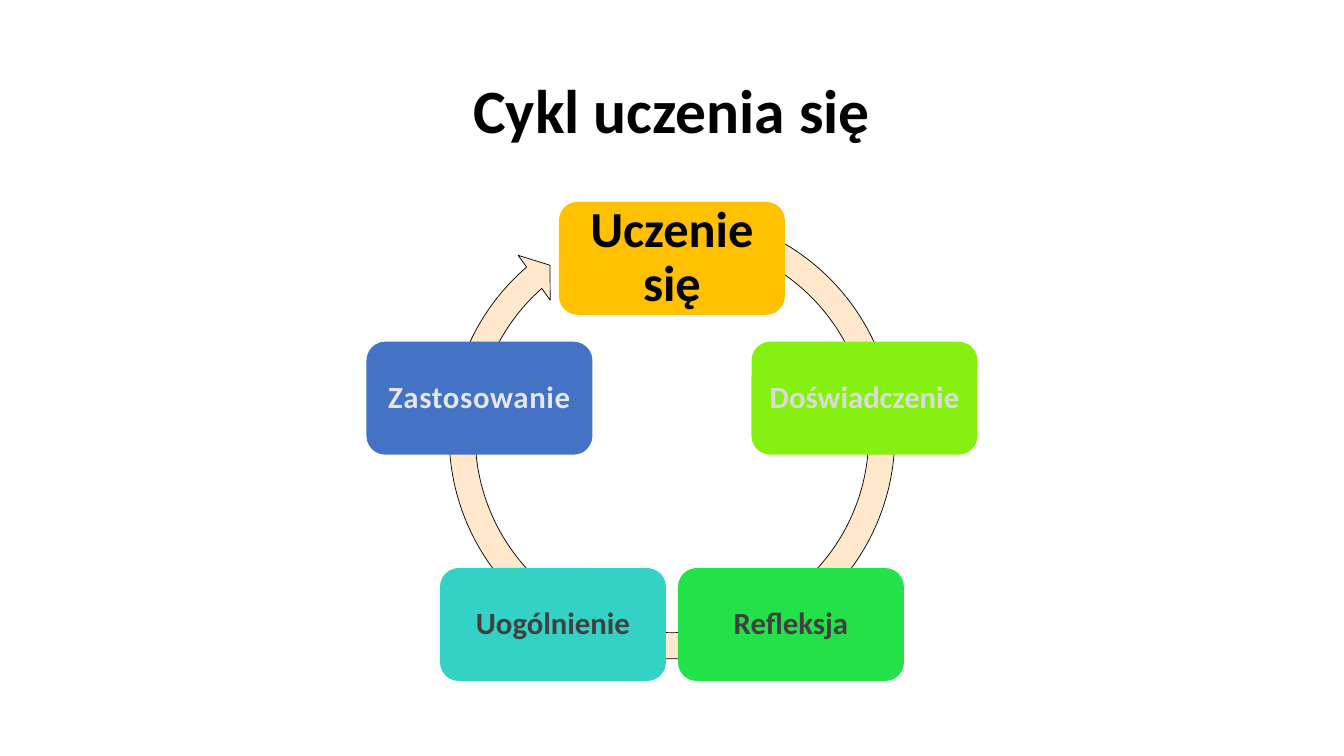
from math import cos, radians, sin

from pptx import Presentation
from pptx.dml.color import RGBColor
from pptx.enum.shapes import MSO_SHAPE as Shape
from pptx.enum.text import MSO_ANCHOR as Anchor, PP_ALIGN as Align
from pptx.util import Inches, Pt

# Square grid: 160 columns by 90 rows
COLUMNS, ROWS = 160, 90
CELL = Inches(1 / 12)

COLOURS = {
    "black": "000000", "ring": "FFE8CC",
    "amber": "FFC000", "lime": "86F011", "green": "23E148",
    "teal": "33D2C5", "blue": "4472C4",
    "silver": "DBDBDB", "graphite": "404040", "pearl": "E7E6E6",
}

# Cycle geometry in grid cells
CENTRE_COLUMN, CENTRE_ROW, RADIUS = 80, 54.85, 24.1
CARD_WIDTH, CARD_HEIGHT = 26.9, 13.45
RING_SIZE, RING_ROW = 56.5, 51.9
RING_BENDS = (0.055, 3.307, 137.364, 174.101, 0.058)

# Clockwise from the top: label, fill, ink, size, inset in inches, letter spacing
STAGES = [
    ("Uczenie się", "amber", "black", 36, 0.15, 0),
    ("Doświadczenie", "lime", "silver", 22, 0.09, 0),
    ("Refleksja", "green", "graphite", 22, 0.09, 0),
    ("Uogólnienie", "teal", "graphite", 22, 0.09, 0),
    ("Zastosowanie", "blue", "pearl", 22, 0.09, 50),
]


class CycleSlide:
    font_style = {"name": "Calibri", "bold": True}
    paragraph_style = {"alignment": Align.CENTER, "line_spacing": 0.9}
    frame_style = {"word_wrap": True, "vertical_anchor": Anchor.MIDDLE}

    def __init__(self, deck):
        self.slide = deck.slides.add_slide(deck.slide_layouts[6])

    def colour(self, name):
        return RGBColor.from_string(COLOURS[name])

    def box(self, column, row, width, height):
        """Grid box around a centre point."""
        cells = (column - width / 2, row - height / 2, width, height)
        return [round(value * CELL) for value in cells]

    def label(self, frame, words, ink, size, inset=None, spacing=0):
        frame_style = dict(self.frame_style)
        if inset is not None:
            for side in ("left", "top", "right", "bottom"):
                frame_style[f"margin_{side}"] = Inches(inset)
        paragraph = frame.paragraphs[0]
        run = paragraph.add_run()
        run.text = words
        for target, style in (
            (frame, frame_style),
            (paragraph, self.paragraph_style),
            (run.font, {**self.font_style, "size": Pt(size)}),
        ):
            for key, value in style.items():
                setattr(target, key, value)
        run.font.color.rgb = self.colour(ink)
        if spacing:
            run._r.get_or_add_rPr().set("spc", str(spacing))

    def shape(self, kind, box, fill):
        shape = self.slide.shapes.add_shape(kind, *box)
        shape.shadow.inherit = False
        shape.fill.solid()
        shape.fill.fore_color.rgb = self.colour(fill)
        shape.line.fill.background()
        return shape

    def title(self, words):
        heading = self.slide.shapes.add_textbox(*self.box(CENTRE_COLUMN, 13.5, 138, 17.4))
        self.label(heading.text_frame, words, "black", 44)

    def ring(self):
        box = self.box(CENTRE_COLUMN, RING_ROW, RING_SIZE, RING_SIZE)
        ring = self.shape(Shape.CIRCULAR_ARROW, box, "ring")
        for index, bend in enumerate(RING_BENDS):
            ring.adjustments[index] = bend
        ring.line.color.rgb = self.colour("black")
        ring.line.width = Pt(0.5)

    def card(self, angle, words, fill, *text_style):
        column = CENTRE_COLUMN + RADIUS * sin(angle)
        row = CENTRE_ROW - RADIUS * cos(angle)
        box = self.box(column, row, CARD_WIDTH, CARD_HEIGHT)
        card = self.shape(Shape.ROUNDED_RECTANGLE, box, fill)
        self.label(card.text_frame, words, *text_style)


def main():
    deck = Presentation()
    deck.slide_width, deck.slide_height = COLUMNS * CELL, ROWS * CELL
    cycle = CycleSlide(deck)

    # Heading
    cycle.title("Cykl uczenia się")

    # Ring behind the evenly spaced stages
    cycle.ring()
    for index, stage in enumerate(STAGES):
        cycle.card(radians(360 / len(STAGES) * index), *stage)

    deck.save("out.pptx")


if __name__ == "__main__":
    main()
